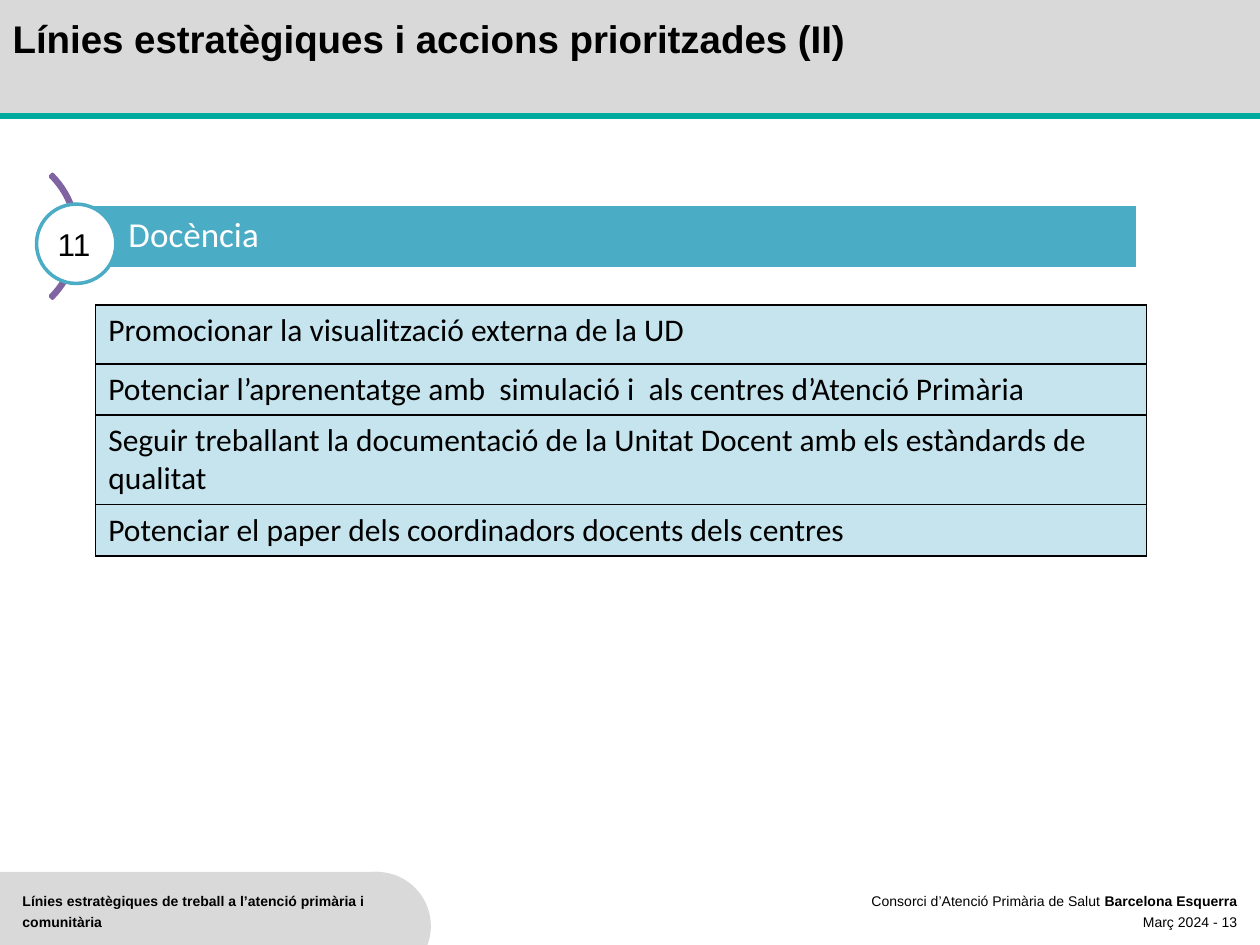
from dataclasses import dataclass

from lxml.etree import SubElement
from pptx import Presentation
from pptx.dml.color import RGBColor
from pptx.enum.shapes import MSO_CONNECTOR, MSO_SHAPE
from pptx.enum.text import MSO_ANCHOR, MSO_AUTO_SIZE, PP_ALIGN
from pptx.oxml.ns import qn
from pptx.util import Inches, Pt


@dataclass(frozen=True)
class Theme:
    grey: str = "D9D9D9"
    teal: str = "00AA9E"
    blue: str = "4BACC6"
    pale_blue: str = "C5E4ED"
    purple: str = "8064A2"
    black: str = "000000"
    white: str = "FFFFFF"
    heading_font: str = "Arial"
    body_font: str = "Calibri"
    title_size: int = 22
    section_size: int = 20
    body_size: int = 18
    footer_size: int = 8


THEME = Theme()
SLIDE_WIDTH, SLIDE_HEIGHT = 10, 7.5
HEADER_HEIGHT = 0.92
FOOTER_TOP = 6.92

ACTIONS = [
    ("Promocionar la visualització externa de la UD", 0.47),
    ("Potenciar l’aprenentatge amb  simulació i  als centres d’Atenció Primària", 0.4),
    ("Seguir treballant la documentació de la Unitat Docent amb els estàndards de qualitat", 0.7),
    ("Potenciar el paper dels coordinadors docents dels centres", 0.4),
]


def color(value):
    return RGBColor.from_string(value)


def write_text(frame, text, *, size, font=THEME.heading_font, ink=THEME.black, bold=False,
               align=PP_ALIGN.LEFT, anchor=MSO_ANCHOR.TOP, spacing=None, bold_ending=""):
    """Write one paragraph per line; bold_ending is set bold after the first line."""
    frame.word_wrap = True
    frame.auto_size = MSO_AUTO_SIZE.NONE
    frame.vertical_anchor = anchor
    for index, line in enumerate(text.split("\n")):
        paragraph = frame.add_paragraph() if index else frame.paragraphs[0]
        paragraph.alignment = align
        paragraph.line_spacing = spacing
        pieces = [(line, bold)]
        if bold_ending and index == 0:
            pieces.append((bold_ending, True))
        for piece, is_bold in pieces:
            run = paragraph.add_run()
            run.text = piece
            run.font.name = font
            run.font.size = Pt(size)
            run.font.bold = is_bold
            run.font.color.rgb = color(ink)


def add_text(slide, box, text, **text_format):
    text_box = slide.shapes.add_textbox(*map(Inches, box))
    write_text(text_box.text_frame, text, **text_format)


def add_shape(slide, preset, box, fill=None, line=None):
    shape = slide.shapes.add_shape(preset, *map(Inches, box))
    shape.shadow.inherit = False
    if fill:
        shape.fill.solid()
        shape.fill.fore_color.rgb = color(fill)
    else:
        shape.fill.background()
    if line:
        shape.line.color.rgb = color(line)
        shape.line.width = Pt(2)
    else:
        shape.line.fill.background()
    return shape


def add_header(slide, text):
    add_shape(slide, MSO_SHAPE.RECTANGLE, (0, 0, SLIDE_WIDTH, HEADER_HEIGHT), THEME.grey)
    rule = slide.shapes.add_connector(
        MSO_CONNECTOR.STRAIGHT, 0, Inches(HEADER_HEIGHT), Inches(SLIDE_WIDTH), Inches(HEADER_HEIGHT))
    rule.line.color.rgb = color(THEME.teal)
    rule.line.width = Pt(3)
    SubElement(rule.element.spPr, qn("a:effectLst"))

    title = slide.shapes.title
    title.left, title.top, title.width, title.height = map(Inches, (0, 0.13, 8.53, 0.41))
    write_text(title.text_frame, text, size=THEME.title_size, bold=True, spacing=Pt(22))
    # Bring the title in front of the header band
    title.element.getparent().append(title.element)


def add_footer(slide):
    add_shape(slide, MSO_SHAPE.RECTANGLE, (0, FOOTER_TOP, 3.02, 0.72), THEME.grey)
    add_shape(slide, MSO_SHAPE.OVAL, (2.56, FOOTER_TOP, 0.86, 0.86), THEME.grey)
    add_text(slide, (0.08, 7, 3.02, 0.47),
             "Línies estratègiques de treball a l’atenció primària i comunitària",
             size=THEME.footer_size, bold=True, spacing=Pt(12))
    add_text(slide, (6.75, 7, 3.17, 0.5),
             "Consorci d’Atenció Primària de Salut \nMarç 2024 - 13",
             bold_ending="Barcelona Esquerra",
             size=THEME.footer_size, align=PP_ALIGN.RIGHT, spacing=Pt(12))


def add_section(slide, number, name):
    arc = add_shape(slide, MSO_SHAPE.BLOCK_ARC, (-0.77, 1.18, 1.39, 1.39), line=THEME.purple)
    for index, value in enumerate((189, 27, 0.017)):
        arc.adjustments[index] = value

    bar = add_shape(slide, MSO_SHAPE.RECTANGLE, (0.61, 1.62, 8.42, 0.51), THEME.blue, THEME.white)
    frame = bar.text_frame
    frame.margin_left = Inches(0.41)
    frame.margin_top = frame.margin_right = frame.margin_bottom = Inches(0.06)
    write_text(frame, name, size=THEME.section_size, font=THEME.body_font, ink=THEME.white,
               anchor=MSO_ANCHOR.MIDDLE, spacing=0.9)

    add_shape(slide, MSO_SHAPE.OVAL, (0.29, 1.62, 0.63, 0.63), THEME.white, THEME.blue)
    add_text(slide, (0.36, 1.74, 0.5, 0.4), number, size=THEME.body_size)


def set_borders(cell):
    properties = cell._tc.get_or_add_tcPr()
    for position, side in enumerate(("a:lnL", "a:lnR", "a:lnT", "a:lnB")):
        border = properties.makeelement(qn(side), {"w": str(Pt(1))})
        fill = SubElement(border, qn("a:solidFill"))
        SubElement(fill, qn("a:srgbClr"), val=THEME.black)
        properties.insert(position, border)


def add_actions_table(slide, actions):
    height = sum(row_height for _, row_height in actions)
    table = slide.shapes.add_table(
        len(actions), 1, *map(Inches, (0.76, 2.42, 8.34, height))).table
    table.first_row = table.horz_banding = False
    for row, (text, row_height) in zip(table.rows, actions):
        row.height = Inches(row_height)
        cell = row.cells[0]
        cell.fill.solid()
        cell.fill.fore_color.rgb = color(THEME.pale_blue)
        set_borders(cell)
        write_text(cell.text_frame, text, size=THEME.body_size, font=THEME.body_font)


def main():
    presentation = Presentation()
    presentation.slide_width = Inches(SLIDE_WIDTH)
    presentation.slide_height = Inches(SLIDE_HEIGHT)
    slide = presentation.slides.add_slide(presentation.slide_layouts.get_by_name("Title Only"))
    add_footer(slide)
    add_header(slide, "Línies estratègiques i accions prioritzades (II)")
    add_section(slide, "11", "Docència")
    add_actions_table(slide, ACTIONS)
    presentation.save("out.pptx")


if __name__ == "__main__":
    main()
